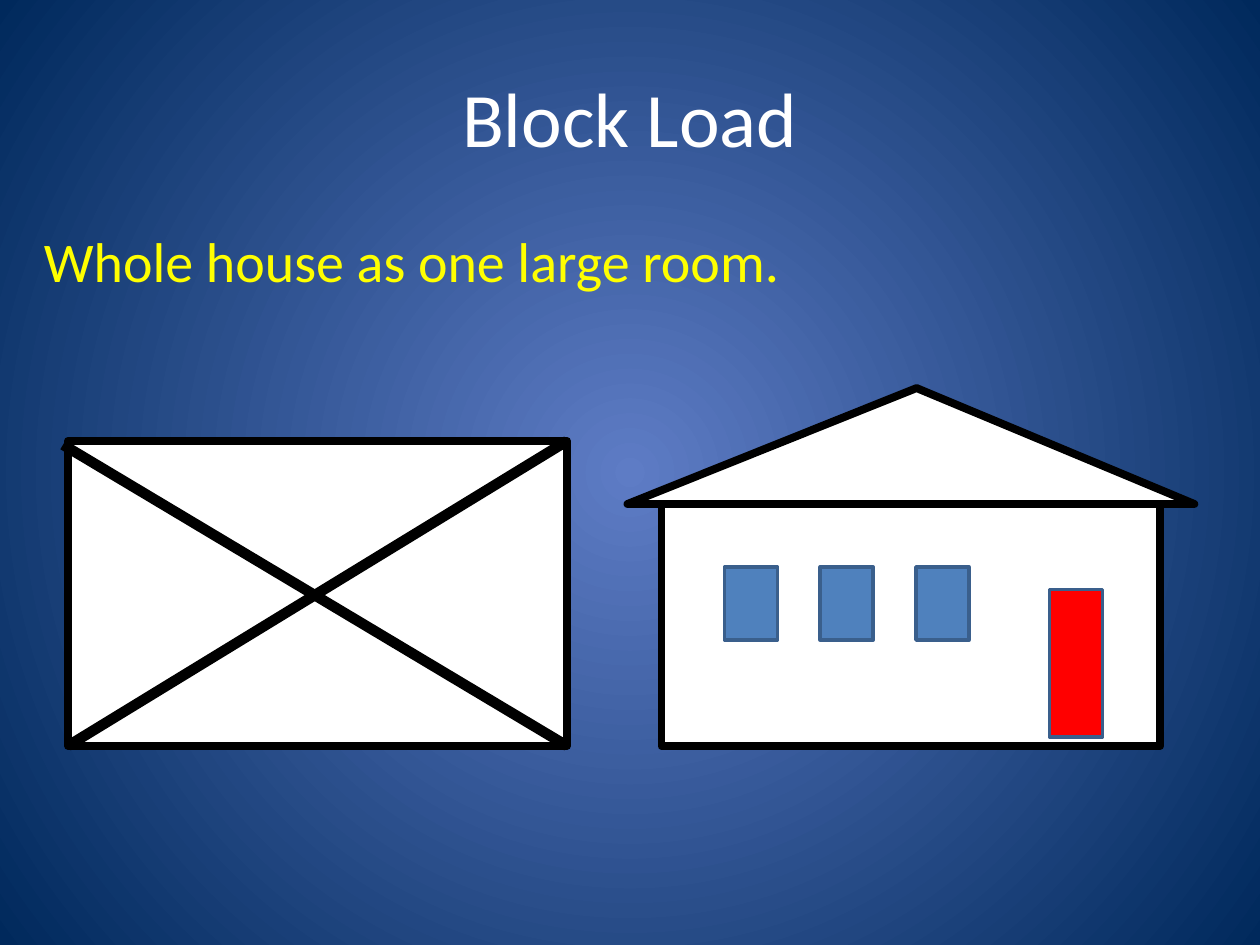
from pptx import Presentation
from pptx.dml.color import RGBColor
from pptx.enum.shapes import MSO_CONNECTOR, MSO_SHAPE
from pptx.enum.text import MSO_ANCHOR, PP_ALIGN
from pptx.oxml import parse_xml
from pptx.oxml.ns import nsdecls, qn
from pptx.util import Inches, Pt

RECTANGLE = MSO_SHAPE.RECTANGLE
TRIANGLE = MSO_SHAPE.ISOSCELES_TRIANGLE
STRAIGHT = MSO_CONNECTOR.STRAIGHT
LEFT, CENTER = PP_ALIGN.LEFT, PP_ALIGN.CENTER
TOP, MIDDLE = MSO_ANCHOR.TOP, MSO_ANCHOR.MIDDLE

FONT = "Calibri"
WHITE, BLACK, RED, YELLOW = "FFFFFF", "000000", "FF0000", "FFFF00"
WINDOW_BLUE, TRIM_BLUE = "4F81BD", "3A5F8C"
GLOW_BLUE, EDGE_BLUE = "5E7CC5", "00295C"


def color(value):
    """Turn a hex string into a colour."""
    return RGBColor.from_string(value)


def set_background(slide, inner, outer):
    """Fill the background with a circular gradient from the centre."""
    fill = slide.background.fill
    fill.gradient()
    for stop, value in zip(fill.gradient_stops, (inner, outer)):
        stop.color.rgb = color(value)
    linear = next(slide.element.iter(qn("a:lin")))
    circle = parse_xml(
        f'<a:path {nsdecls("a")} path="circle">'
        '<a:fillToRect l="50000" t="50000" r="50000" b="50000"/></a:path>'
    )
    linear.getparent().replace(linear, circle)


def add_text(slide, box, text, size, text_color, alignment, anchor):
    """Add a wrapped one-paragraph text box."""
    text_frame = slide.shapes.add_textbox(*map(Inches, box)).text_frame
    text_frame.word_wrap = True
    text_frame.vertical_anchor = anchor
    text_frame.text = text
    paragraph = text_frame.paragraphs[0]
    paragraph.alignment = alignment
    font = paragraph.runs[0].font
    font.name, font.size = FONT, Pt(size)
    font.color.rgb = color(text_color)


def add_block(slide, kind, box, fill, line, width):
    """Add a filled and outlined preset shape."""
    shape = slide.shapes.add_shape(kind, *map(Inches, box))
    shape.shadow.inherit = False
    shape.fill.solid()
    shape.fill.fore_color.rgb = color(fill)
    shape.line.color.rgb = color(line)
    shape.line.width = Pt(width)
    return shape


def add_line(slide, start, end, line, width):
    """Add a straight line without a shadow."""
    connector = slide.shapes.add_connector(STRAIGHT, *map(Inches, start + end))
    connector.line.color.rgb = color(line)
    connector.line.width = Pt(width)
    connector.element.spPr.append(parse_xml(f'<a:effectLst {nsdecls("a")}/>'))


def add_floor_plan(slide):
    """Draw the crossed plan of the whole house."""
    add_block(slide, RECTANGLE, (0.54, 3.5, 3.96, 2.42), WHITE, BLACK, 4.5)
    add_line(slide, (4.5, 3.5), (0.54, 5.92), BLACK, 6)
    add_line(slide, (4.5, 5.92), (0.5, 3.53), BLACK, 6)


def add_house(slide):
    """Draw the front of the house with roof, door and windows."""
    add_block(slide, RECTANGLE, (5.25, 4, 3.96, 1.92), WHITE, BLACK, 4.5)
    roof = add_block(slide, TRIANGLE, (4.98, 3.08, 4.5, 0.92), WHITE, BLACK, 4.5)
    roof.adjustments[0] = 0.51
    add_block(slide, RECTANGLE, (8.33, 4.68, 0.42, 1.17), RED, TRIM_BLUE, 2)
    for index in range(3):
        box = (5.75 + 0.76 * index, 4.5, 0.42, 0.58)
        add_block(slide, RECTANGLE, box, WINDOW_BLUE, TRIM_BLUE, 2)


def main():
    """Build and save the slide."""
    presentation = Presentation()
    presentation.slide_width, presentation.slide_height = Inches(10), Inches(7.5)
    slide = presentation.slides.add_slide(presentation.slide_layouts[6])
    set_background(slide, GLOW_BLUE, EDGE_BLUE)
    add_text(slide, (0.5, 0.3, 9, 1.25), "Block Load", 44, WHITE, CENTER, MIDDLE)
    add_text(slide, (0.25, 1.75, 9.5, 0.83), "Whole house as one large room.",
             32, YELLOW, LEFT, TOP)
    add_floor_plan(slide)
    add_house(slide)
    presentation.save("out.pptx")


if __name__ == "__main__":
    main()
